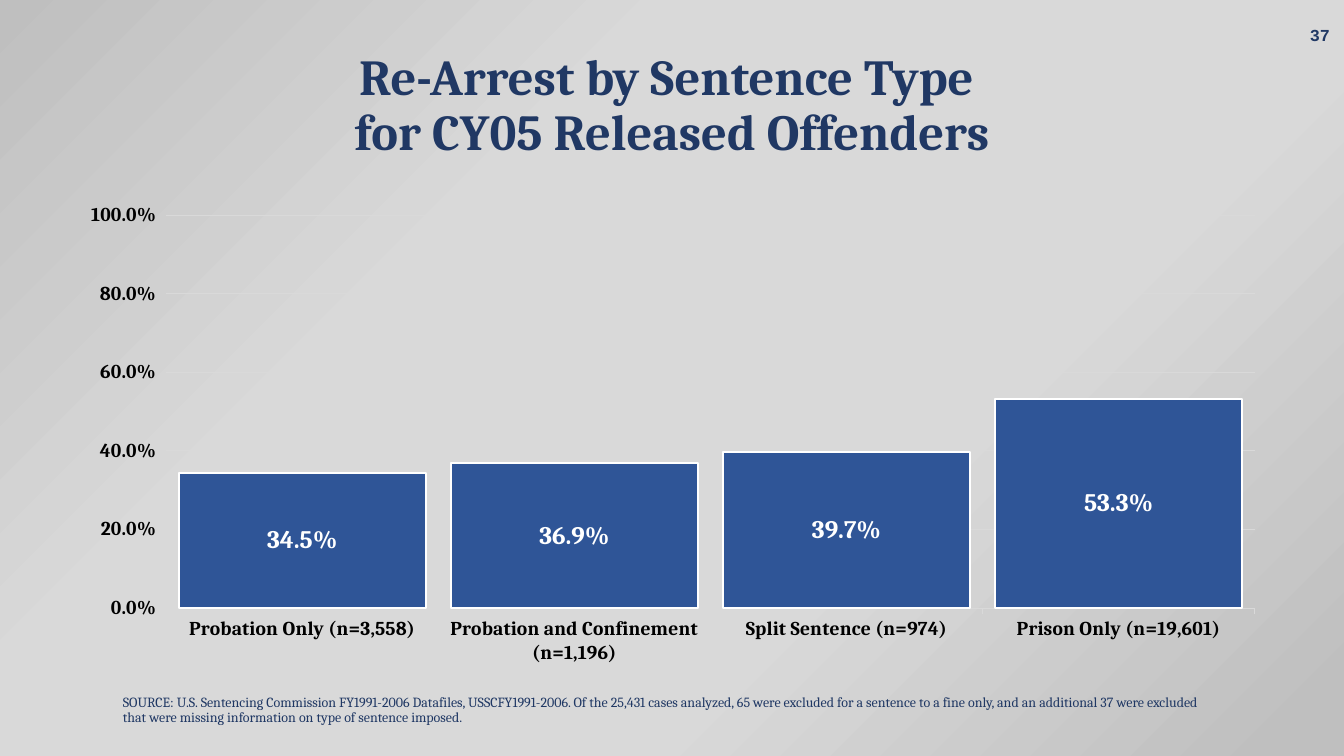
from lxml import etree
from pptx import Presentation
from pptx.chart.data import CategoryChartData
from pptx.dml.color import RGBColor
from pptx.enum.chart import XL_CHART_TYPE, XL_LABEL_POSITION, XL_TICK_MARK
from pptx.enum.text import MSO_ANCHOR, MSO_AUTO_SIZE, PP_ALIGN
from pptx.oxml import parse_xml
from pptx.util import Emu, Pt

COLUMNS = XL_CHART_TYPE.COLUMN_CLUSTERED
LABEL_CENTER = XL_LABEL_POSITION.CENTER
TICK_OUTSIDE = XL_TICK_MARK.OUTSIDE
MIDDLE, BOTTOM = MSO_ANCHOR.MIDDLE, MSO_ANCHOR.BOTTOM
NO_AUTOFIT = MSO_AUTO_SIZE.NONE
LEFT, CENTER, RIGHT = PP_ALIGN.LEFT, PP_ALIGN.CENTER, PP_ALIGN.RIGHT

PX = 914400 / 100.8
COLORS = {
    "navy": "203864",
    "bar": "2F5597",
    "white": "FFFFFF",
    "black": "000000",
    "grid": "D9D9D9",
    "edge": "BFBFBF",
}
GRADIENT_STOPS = [(0, "edge"), (33, "grid"), (66, "grid"), (97, "edge")]
REARREST_RATES = {
    "Probation Only (n=3,558)": 0.345,
    "Probation and Confinement (n=1,196)": 0.369,
    "Split Sentence (n=974)": 0.397,
    "Prison Only (n=19,601)": 0.533,
}


def set_font(font, size, color, bold=True, name="Cambria"):
    font.name = name
    font.size = Pt(size)
    font.bold = bold
    font.color.rgb = RGBColor.from_string(COLORS[color])


def place(*lengths):
    return [Emu(round(length * PX)) for length in lengths]


deck = Presentation()
deck.slide_width, deck.slide_height = place(1344, 756)
slide = deck.slides.add_slide(deck.slide_layouts[5])

background = slide.background.fill
background.gradient()
background.gradient_angle = 315
stop_list = slide.background._cSld.find(".//{*}gsLst")
for old_stop in list(stop_list):
    stop_list.remove(old_stop)
namespace = etree.QName(stop_list).namespace
for position, color in GRADIENT_STOPS:
    stop_list.append(parse_xml(
        f'<a:gs xmlns:a="{namespace}" pos="{position * 1000}">'
        f'<a:srgbClr val="{COLORS[color]}"/></a:gs>'))

number_box = slide.shapes.add_textbox(*place(1038, 15, 302, 40))
number_frame = number_box.text_frame
number_frame.word_wrap = True
number_frame.vertical_anchor = MIDDLE
number_para = number_frame.paragraphs[0]
number_para.text = "37"
number_para.alignment = RIGHT
set_font(number_para.font, 12, "navy", name="Courier New")

title = slide.shapes.title
title.left, title.top, title.width, title.height = place(0, 40, 1344, 133)
title_frame = title.text_frame
title_frame.auto_size = NO_AUTOFIT
title_frame.vertical_anchor = MIDDLE
title_para = title_frame.paragraphs[0]
title_para.text = "Re-Arrest by Sentence Type \vfor CY05 Released Offenders"
title_para.alignment = CENTER
title_para.line_spacing = 0.9
set_font(title_para.font, 36, "navy")

chart_data = CategoryChartData(number_format="0.0%")
chart_data.categories = list(REARREST_RATES)
chart_data.add_series("Series 1", list(REARREST_RATES.values()))
chart_frame = slide.shapes.add_chart(COLUMNS, *place(67, 194, 1212, 480), chart_data)
chart = chart_frame.chart
chart.has_title = False
chart.has_legend = False
set_font(chart.font, 10, "black", bold=False)

plot = chart.plots[0]
plot.gap_width = 10
plot.vary_by_categories = False
series = plot.series[0]
series.format.fill.solid()
series.format.fill.fore_color.rgb = RGBColor.from_string(COLORS["bar"])
series.format.line.color.rgb = RGBColor.from_string(COLORS["white"])
series.format.line.width = Pt(1.5)
labels = series.data_labels
labels.show_value = True
labels.position = LABEL_CENTER
labels.number_format = "0.0%"
labels.number_format_is_linked = False
set_font(labels.font, 18, "white")

category_axis, value_axis = chart.category_axis, chart.value_axis
for axis in (category_axis, value_axis):
    axis.major_tick_mark = TICK_OUTSIDE
    set_font(axis.tick_labels.font, 14, "black")
value_axis.minimum_scale = 0
value_axis.maximum_scale = 1
value_axis.major_unit = 0.2
value_axis.tick_labels.number_format = "0.0%"
value_axis.tick_labels.number_format_is_linked = False
value_axis.format.line.fill.background()
for line in (category_axis.format.line, value_axis.major_gridlines.format.line):
    line.color.rgb = RGBColor.from_string(COLORS["grid"])
    line.width = Pt(0.75)

source_box = slide.shapes.add_textbox(*place(113, 655, 1119, 76))
source_frame = source_box.text_frame
source_frame.word_wrap = True
source_frame.vertical_anchor = BOTTOM
source_para = source_frame.paragraphs[0]
source_para.text = (
    "SOURCE: U.S. Sentencing Commission FY1991-2006 Datafiles, USSCFY1991-2006. "
    "Of the 25,431 cases analyzed, 65 were excluded for a sentence to a fine only, "
    "and an additional 37 were excluded that were missing information on type of "
    "sentence imposed.")
source_para.alignment = LEFT
source_para.line_spacing = 0.9
set_font(source_para.font, 10, "navy", bold=False)

deck.save("out.pptx")
